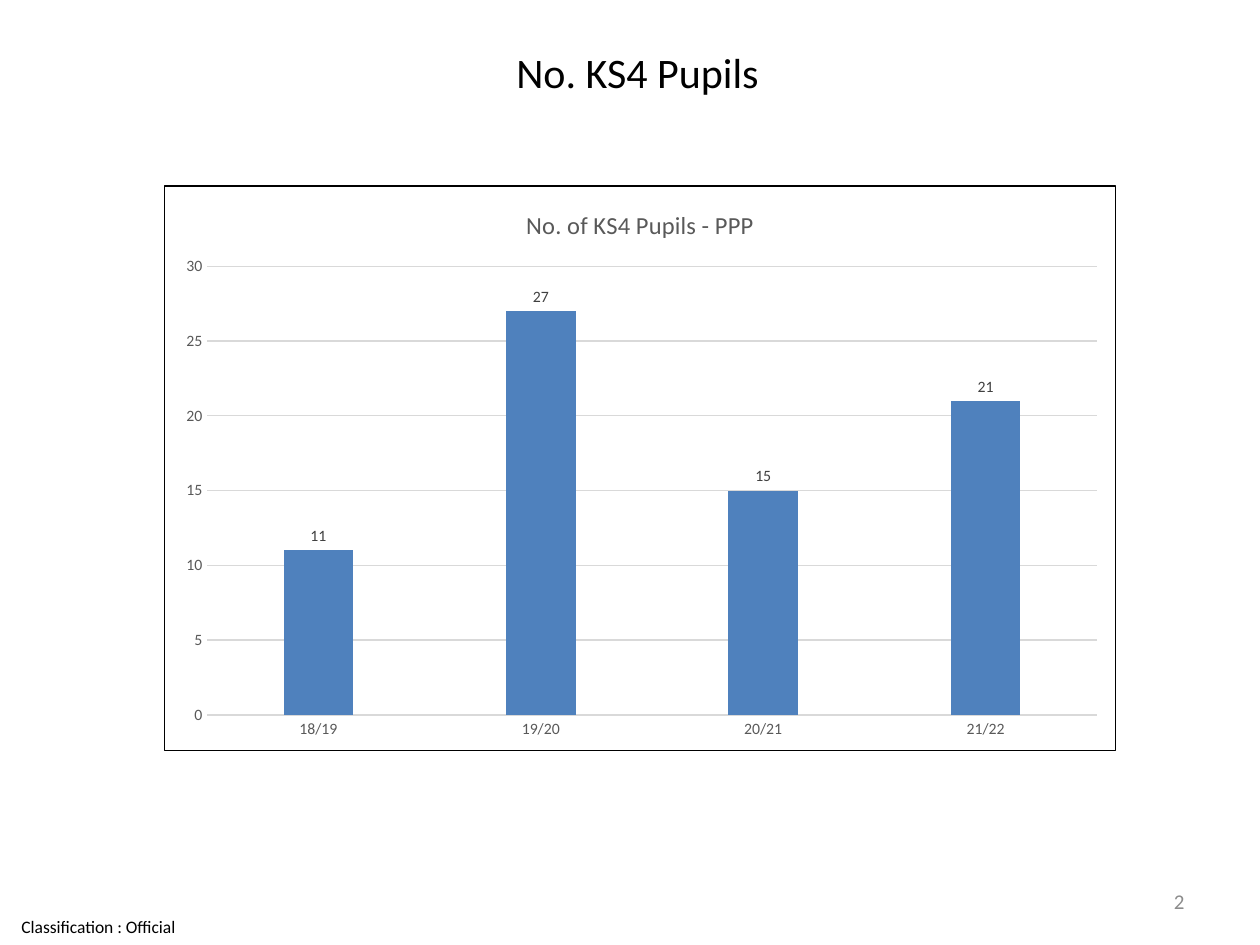
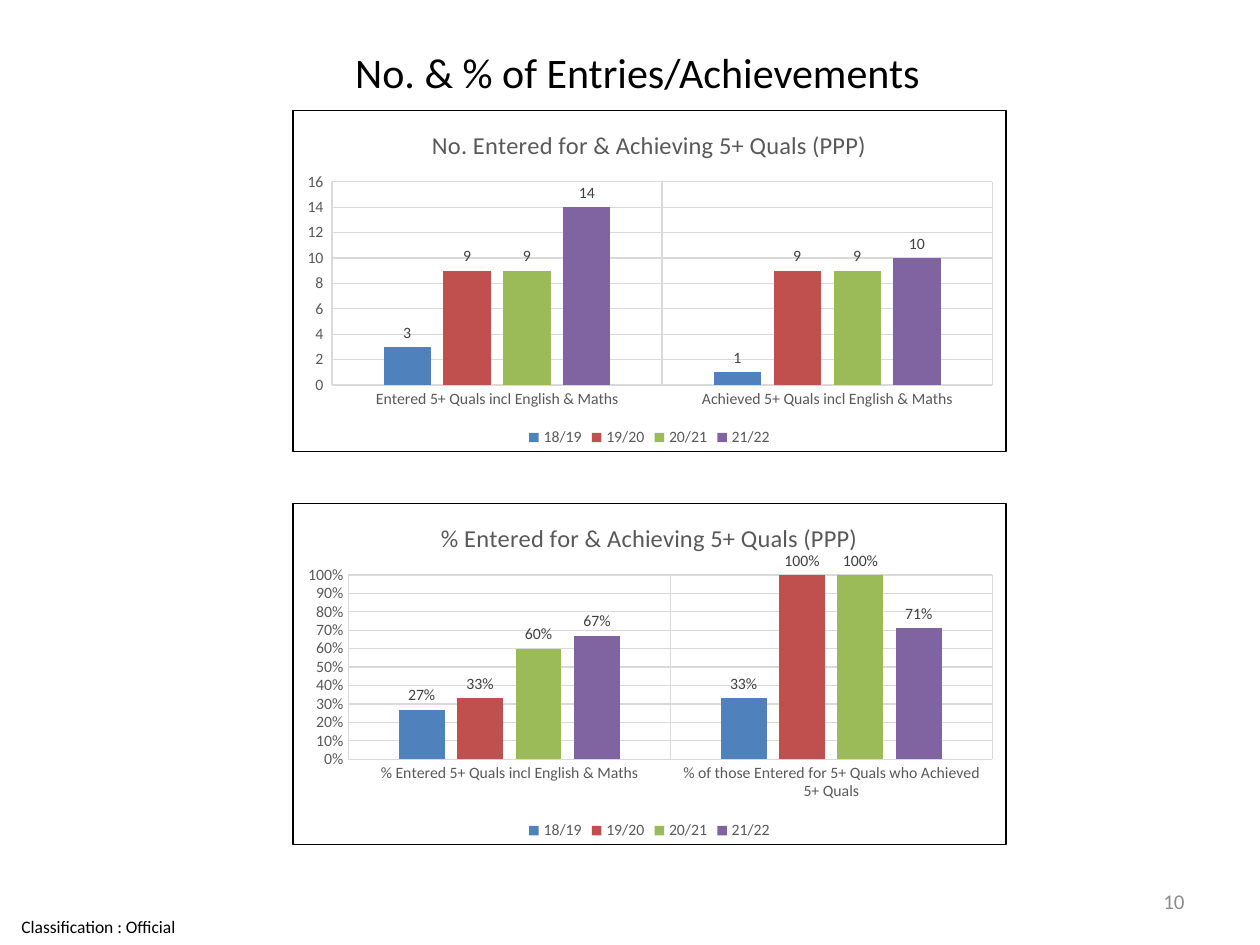
from lxml import etree
from pptx import Presentation
from pptx.chart.data import CategoryChartData
from pptx.dml.color import RGBColor
from pptx.enum import chart as ch, text
from pptx.oxml import parse_xml
from pptx.oxml.ns import nsdecls, qn
from pptx.util import Inches, Pt

FONT = "Calibri"
BLACK = RGBColor(0x00, 0x00, 0x00)
WHITE = RGBColor(0xFF, 0xFF, 0xFF)
PAGE_GREY = RGBColor(0x8C, 0x8C, 0x8C)
TEXT_GREY = RGBColor(0x59, 0x59, 0x59)
LABEL_GREY = RGBColor(0x40, 0x40, 0x40)
GRID_GREY = RGBColor(0xD9, 0xD9, 0xD9)
BLUE = RGBColor(0x4F, 0x81, 0xBD)
RED = RGBColor(0xC0, 0x50, 0x4D)
GREEN = RGBColor(0x9B, 0xBB, 0x59)
PURPLE = RGBColor(0x80, 0x64, 0xA2)
SERIES_COLORS = (BLUE, RED, GREEN, PURPLE)

YEARS = ("18/19", "19/20", "20/21", "21/22")
COUNT, PERCENT = "0", "0%"
AXIS_COUNT = r"#,##0_ ;\-#,##0\ "

TITLE_BOX = (0.76, 0.29, 8.6, 0.55)
NUMBER_BOX = (7.17, 6.95, 2.33, 0.4)
FOOTER_BOX = (0, 7.21, 1.56, 0.29)


def set_font(font, size, color):
    for name, value in {"name": FONT, "size": Pt(size), "bold": False}.items():
        setattr(font, name, value)
    font.color.rgb = color


def set_line(line, color):
    line.color.rgb = color
    line.width = Pt(0.75)


def add_text(s, box, words, size, color, align, **frame):
    tf = s.shapes.add_textbox(*map(Inches, box)).text_frame
    settings = {"word_wrap": True, "vertical_anchor": text.MSO_ANCHOR.MIDDLE, **frame}
    for name, value in settings.items():
        setattr(tf, name, value)
    p = tf.paragraphs[0]
    p.alignment = align
    r = p.add_run()
    r.text = words
    set_font(r.font, size, color)


def add_page(prs, title, number):
    """Add a slide with the shared title, page number and classification."""
    s = prs.slides.add_slide(prs.slide_layouts[6])
    add_text(s, FOOTER_BOX, "Classification : Official", 10, BLACK, text.PP_ALIGN.LEFT,
             margin_left=Inches(0.17), margin_right=0, margin_top=0, margin_bottom=0,
             word_wrap=False)
    add_text(s, TITLE_BOX, title, 24, BLACK, text.PP_ALIGN.CENTER)
    add_text(s, NUMBER_BOX, number, 12, PAGE_GREY, text.PP_ALIGN.RIGHT)
    return s


def add_frame(chart):
    """Give the chart area a white fill and a thin black border."""
    area = parse_xml(
        f'<c:spPr {nsdecls("c", "a")}>'
        f'<a:solidFill><a:srgbClr val="{WHITE}"/></a:solidFill>'
        f'<a:ln w="{Pt(0.75)}"><a:solidFill><a:srgbClr val="{BLACK}"/></a:solidFill></a:ln>'
        '</c:spPr>')
    chart.element.find(qn("c:chart")).addnext(area)


def place_plot(chart, box, plot):
    """Fix the inner plot area at plot (inches from the chart's corner)."""
    area = chart.element.find(qn("c:chart")).find(qn("c:plotArea"))
    for old in area.findall(qn("c:layout")):
        area.remove(old)
    layout = etree.Element(qn("c:layout"))
    manual = etree.SubElement(layout, qn("c:manualLayout"))
    etree.SubElement(manual, qn("c:layoutTarget"), val="inner")
    for name in "xy":
        etree.SubElement(manual, qn(f"c:{name}Mode"), val="edge")
    for name, length, whole in zip("xywh", plot, box[2:] * 2):
        etree.SubElement(manual, qn(f"c:{name}"), val=f"{length / whole:.4f}")
    area.insert(0, layout)


def style_axes(chart, number_format, maximum, dividers):
    cat, val = chart.category_axis, chart.value_axis
    for axis in (cat, val):
        axis.major_tick_mark = axis.minor_tick_mark = ch.XL_TICK_MARK.NONE
        set_font(axis.tick_labels.font, 9, TEXT_GREY)
    set_line(cat.format.line, GRID_GREY)
    val.format.line.fill.background()
    cat.has_major_gridlines = dividers
    for axis in (cat, val) if dividers else (val,):
        set_line(axis.major_gridlines.format.line, GRID_GREY)
    val.minimum_scale = 0
    if maximum:
        val.maximum_scale = maximum
    val.tick_labels.number_format = number_format
    val.tick_labels.number_format_is_linked = False


def style_series(series, color, number_format):
    series.format.fill.solid()
    series.format.fill.fore_color.rgb = color
    series.invert_if_negative = False
    labels = series.data_labels
    settings = {"show_value": True, "position": ch.XL_LABEL_POSITION.OUTSIDE_END,
                "number_format": number_format, "number_format_is_linked": False}
    for name, value in settings.items():
        setattr(labels, name, value)
    set_font(labels.font, 9, LABEL_GREY)


def add_columns(s, box, plot, title, cats, series, label_format=COUNT,
                axis_format=COUNT, maximum=None):
    """Draw a framed column chart; several series bring a legend and dividers."""
    data = CategoryChartData(number_format=label_format)
    data.categories = cats
    for name, values in series:
        data.add_series(name, values)
    chart = s.shapes.add_chart(ch.XL_CHART_TYPE.COLUMN_CLUSTERED,
                               *map(Inches, box), data).chart
    set_font(chart.font, 10, BLACK)
    chart.has_title = True
    chart.chart_title.include_in_layout = False
    chart.chart_title.text_frame.text = title
    set_font(chart.chart_title.text_frame.paragraphs[0].runs[0].font, 14, TEXT_GREY)

    grouped = len(series) > 1
    chart.has_legend = grouped
    if grouped:
        chart.legend.position = ch.XL_LEGEND_POSITION.BOTTOM
        chart.legend.include_in_layout = False
        set_font(chart.legend.font, 9, TEXT_GREY)

    bars = chart.plots[0]
    for name, value in {"gap_width": 219, "overlap": -27, "vary_by_categories": False}.items():
        setattr(bars, name, value)
    for one, color in zip(bars.series, SERIES_COLORS):
        style_series(one, color, label_format)
    style_axes(chart, axis_format, maximum, grouped)
    place_plot(chart, box, plot)
    add_frame(chart)


def pupils_slide(prs):
    s = add_page(prs, "No. KS4 Pupils", "2")
    add_columns(s, (1.3, 1.47, 7.56, 4.49), (0.34, 0.64, 7.07, 3.57),
                "No. of KS4 Pupils - PPP", YEARS, [("Series 1", (11, 27, 15, 21))])


def entries_slide(prs):
    s = add_page(prs, "No. & % of Entries/Achievements", "10")
    left, top, width, height, pitch = 2.32, 0.87, 5.67, 2.72, 3.12
    add_columns(s, (left, top, width, height), (0.31, 0.57, 5.25, 1.62),
                "No. Entered for & Achieving 5+ Quals (PPP)",
                ("Entered 5+ Quals incl English & Maths",
                 "Achieved 5+ Quals incl English & Maths"),
                list(zip(YEARS, ((3, 1), (9, 9), (9, 9), (14, 10)))),
                axis_format=AXIS_COUNT)
    add_columns(s, (left, top + pitch, width, height), (0.44, 0.57, 5.12, 1.47),
                "% Entered for & Achieving 5+ Quals (PPP)",
                ("% Entered 5+ Quals incl English & Maths",
                 "% of those Entered for 5+ Quals who Achieved 5+ Quals"),
                list(zip(YEARS, ((0.27, 0.33), (0.33, 1), (0.6, 1), (0.67, 0.71)))),
                PERCENT, PERCENT, maximum=1)


def main():
    prs = Presentation()
    prs.slide_width, prs.slide_height = Inches(10), Inches(7.5)
    pupils_slide(prs)
    entries_slide(prs)
    prs.save("out.pptx")


if __name__ == "__main__":
    main()
